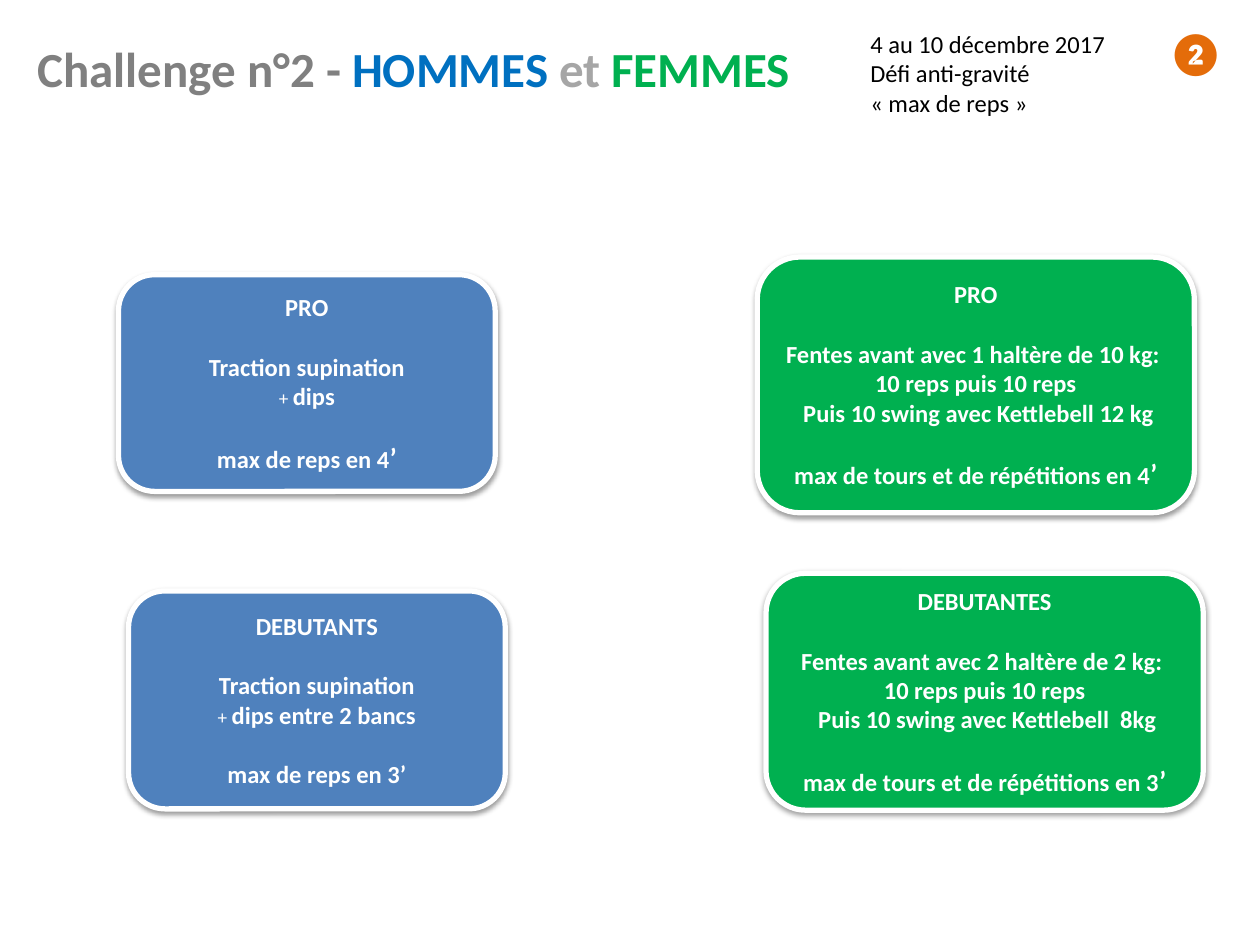
from lxml import etree
from pptx import Presentation
from pptx.dml.color import RGBColor
from pptx.enum.shapes import MSO_SHAPE as Shape
from pptx.enum.text import MSO_ANCHOR as Anchor, PP_ALIGN as Align
from pptx.oxml import parse_xml
from pptx.oxml.ns import nsdecls, qn
from pptx.util import Inches, Pt

WHITE = RGBColor(0xFF, 0xFF, 0xFF)
BLACK = RGBColor(0x00, 0x00, 0x00)
GREY = RGBColor(0x80, 0x80, 0x80)
LIGHT_GREY = RGBColor(0xA6, 0xA6, 0xA6)
BLUE = RGBColor(0x00, 0x70, 0xC0)
CARD_BLUE = RGBColor(0x4F, 0x81, 0xBD)
GREEN = RGBColor(0x00, 0xB0, 0x50)
ORANGE = RGBColor(0xE4, 0x6C, 0x0A)
FONT = "Calibri"
BLANK_LINE = Pt(17)


def add_run(paragraph, text, size, color, bold=False):
    run = paragraph.add_run()
    run.text = text
    run.font.name = FONT
    run.font.size = Pt(size)
    run.font.bold = bold
    run.font.color.rgb = color


def add_text(slide, box, lines, anchor=Anchor.TOP):
    frame = slide.shapes.add_textbox(*map(Inches, box)).text_frame
    frame.word_wrap = True
    frame.vertical_anchor = anchor
    for index, runs in enumerate(lines):
        paragraph = frame.paragraphs[0] if index == 0 else frame.add_paragraph()
        for run in runs:
            add_run(paragraph, *run)


def add_soft_shadow(shape):
    shape.shadow.inherit = False
    effects = shape._element.spPr.find(qn("a:effectLst"))
    effects.append(parse_xml(
        f'<a:outerShdw {nsdecls("a")} blurRad="{Pt(3.1)}" dist="{Pt(1.6)}" '
        'dir="5400000" rotWithShape="0"><a:srgbClr val="000000">'
        '<a:alpha val="38000"/></a:srgbClr></a:outerShdw>'))


def add_card(slide, box, fill, level, exercises, goal):
    shape = slide.shapes.add_shape(Shape.ROUNDED_RECTANGLE, *map(Inches, box))
    shape.fill.solid()
    shape.fill.fore_color.rgb = fill
    shape.line.color.rgb = WHITE
    shape.line.width = Pt(3)
    add_soft_shadow(shape)
    frame = shape.text_frame
    frame.word_wrap = True
    frame.vertical_anchor = Anchor.MIDDLE
    lines = [[(level, 14, True)], *exercises, goal]
    for index, runs in enumerate(lines):
        paragraph = frame.paragraphs[0] if index == 0 else frame.add_paragraph()
        paragraph.alignment = Align.CENTER
        if index in (1, len(lines) - 1):
            paragraph.space_before = BLANK_LINE
        for text, size, bold in runs:
            add_run(paragraph, text, size, WHITE, bold)


def add_men_card(slide, box, level, dips, goal):
    exercises = [[("Traction supination", 14, True)],
                 [("+ ", 11, False), (dips, 14, True)]]
    add_card(slide, box, CARD_BLUE, level, exercises, goal)


def add_women_card(slide, box, level, lunges, swings, minutes):
    exercises = [[(text, 14, True)]
                 for text in (lunges, "10 reps puis 10 reps", swings)]
    goal = [(f"max de tours et de répétitions en {minutes}", 14, True),
            ("’", 16, True)]
    add_card(slide, box, GREEN, level, exercises, goal)


def add_header(slide):
    add_text(slide, (0.2, 0.18, 9.45, 0.71),
             [[("Challenge n°2 - ", 28, GREY, True),
               ("HOMMES ", 28, BLUE, True),
               ("et ", 28, LIGHT_GREY, True),
               ("FEMMES", 28, GREEN, True)]], Anchor.MIDDLE)
    add_text(slide, (9.17, 0.16, 0.62, 0.5), [[("❷", 24, ORANGE, True)]])
    details = ("4 au 10 décembre 2017", "Défi anti-gravité", "« max de reps »")
    add_text(slide, (6.81, 0.18, 2.36, 0.81),
             [[(text, 14, BLACK)] for text in details])


def main():
    presentation = Presentation()
    presentation.slide_width = Inches(10)
    presentation.slide_height = Inches(7.5)
    slide = presentation.slides.add_slide(presentation.slide_layouts[6])
    add_header(slide)
    add_men_card(slide, (0.94, 2.18, 2.99, 1.72), "PRO", "dips",
                 [("max de reps en 4", 14, True), ("’", 16, True)])
    add_men_card(slide, (1.02, 4.69, 2.99, 1.73), "DEBUTANTS",
                 "dips entre 2 bancs", [("max de reps en 3’", 14, True)])
    add_women_card(slide, (6.01, 2.04, 3.47, 2.03), "PRO",
                   "Fentes avant avec 1 haltère de 10 kg: ",
                   " Puis 10 swing avec Kettlebell 12 kg", 4)
    add_women_card(slide, (6.08, 4.55, 3.47, 1.88), "DEBUTANTES",
                   "Fentes avant avec 2 haltère de 2 kg: ",
                   " Puis 10 swing avec Kettlebell  8kg", 3)
    presentation.save("out.pptx")


if __name__ == "__main__":
    main()
